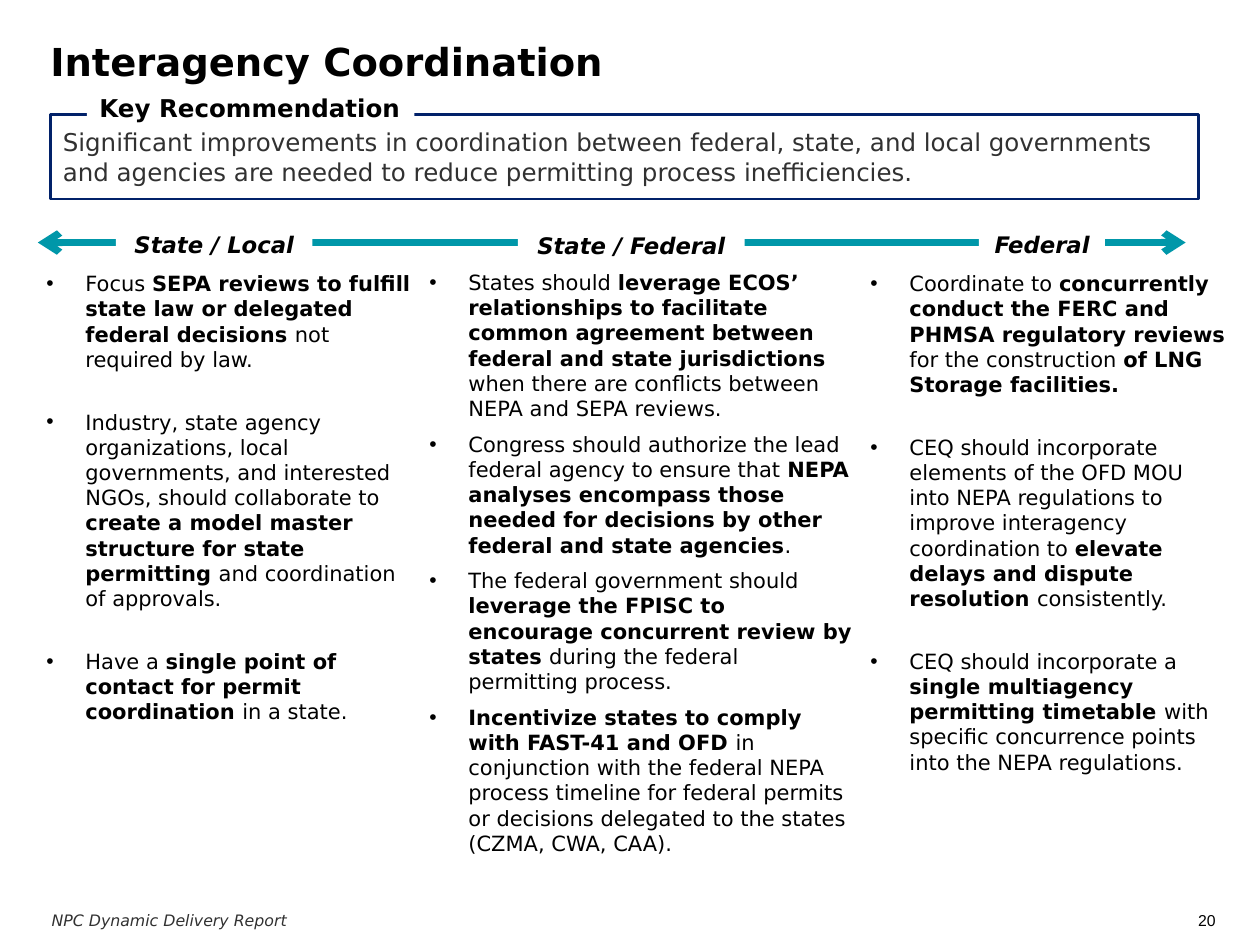
from lxml import etree
from pptx import Presentation
from pptx import util as u
from pptx.dml.color import RGBColor
from pptx.enum import shapes, text
from pptx.oxml.ns import qn

COLORS = {"black": "000000", "grey": "313131", "white": "FFFFFF", "navy": "012169", "teal": "0097A9"}
BODY_FONT = "DejaVu Sans"
INDENT = 22.32

STATE_LOCAL = [
    ["Focus ", "SEPA reviews to fulfill state law or delegated federal decisions ", "not required by law."],
    ["Industry, state agency organizations, local governments, and interested NGOs, should collaborate to",
     " create a model master structure for state permitting ", "and coordination of approvals."],
    ["Have a ", "single point of contact for permit coordination ", "in a state."],
]
STATE_FEDERAL = [
    ["States should ",
     "leverage ECOS’ relationships to facilitate common agreement between federal and state jurisdictions",
     " when there are conflicts between NEPA and SEPA reviews."],
    ["Congress should authorize the lead federal agency to ensure that ",
     "NEPA analyses encompass those needed for decisions by other federal and state agencies", "."],
    ["The federal government should ", "leverage the FPISC to encourage concurrent review by states ",
     "during the federal permitting process."],
    ["", "Incentivize states to comply with FAST-41 and OFD ",
     "in conjunction with the federal NEPA process timeline for federal permits or decisions "
     "delegated to the states (CZMA, CWA, CAA)."],
]
FEDERAL = [
    ["Coordinate to ", "concurrently conduct the FERC and PHMSA regulatory reviews ",
     "for the construction ", "of LNG Storage facilities."],
    ["CEQ should incorporate elements of the OFD MOU into NEPA regulations to improve "
     "interagency coordination to ", "elevate delays and dispute resolution ", "consistently."],
    ["CEQ should incorporate a ", "single multiagency permitting timetable ",
     "with specific concurrence points into the NEPA regulations."],
]


def rgb(name):
    return RGBColor.from_string(COLORS[name])


def points(*lengths):
    return [u.Pt(length) for length in lengths]


def add_run(paragraph, words, size, color="black", bold=False, italic=False, face=BODY_FONT):
    run = paragraph.add_run()
    run.text = words
    font = run.font
    font.size, font.name, font.bold, font.italic = u.Pt(size), face, bold, italic
    font.color.rgb = rgb(color)


def set_frame(frame, insets, wrap=True, anchor=text.MSO_ANCHOR.TOP):
    side, top = points(*insets)
    frame.margin_left = frame.margin_right = side
    frame.margin_top = frame.margin_bottom = top
    frame.word_wrap = wrap
    frame.vertical_anchor = anchor


def add_label(slide, box, words, size, anchor=text.MSO_ANCHOR.TOP, **style):
    frame = slide.shapes.add_textbox(*points(*box)).text_frame
    set_frame(frame, (0, 0), anchor=anchor)
    add_run(frame.paragraphs[0], words, size, **style)


def add_panel(slide, box, words, size, outline=None, insets=(7.2, 7.2), wrap=True,
              align=text.PP_ALIGN.LEFT, **style):
    panel = slide.shapes.add_shape(shapes.MSO_SHAPE.RECTANGLE, *points(*box))
    panel.shadow.inherit = False
    panel.fill.solid()
    panel.fill.fore_color.rgb = rgb("white")
    if outline:
        panel.line.color.rgb = rgb(outline)
        panel.line.width = u.Pt(1.5)
    else:
        panel.line.fill.background()
    set_frame(panel.text_frame, insets, wrap)
    paragraph = panel.text_frame.paragraphs[0]
    paragraph.alignment = align
    add_run(paragraph, words, size, **style)


def add_bullets(slide, box, items, gap):
    frame = slide.shapes.add_textbox(*points(*box)).text_frame
    set_frame(frame, (7.2, 3.6))
    for index, item in enumerate(items):
        paragraph = frame.add_paragraph() if index else frame.paragraphs[0]
        properties = paragraph._p.get_or_add_pPr()
        properties.set("marL", str(u.Pt(INDENT)))
        properties.set("indent", str(-u.Pt(INDENT)))
        etree.SubElement(properties, qn("a:buFont")).set("typeface", "Arial")
        etree.SubElement(properties, qn("a:buChar")).set("char", "•")
        paragraph.space_after = u.Pt(gap)
        for part, words in enumerate(item):
            if words:
                add_run(paragraph, words, 12, bold=part % 2 == 1)


def add_scale_arrow(slide, start, end):
    arrow = slide.shapes.add_connector(shapes.MSO_CONNECTOR.STRAIGHT, *points(*start, *end))
    arrow.line.color.rgb = rgb("teal")
    arrow.line.width = u.Pt(4)
    line = arrow.line._get_or_add_ln()
    for tip in ("a:headEnd", "a:tailEnd"):
        etree.SubElement(line, qn(tip)).set("type", "arrow")
    etree.SubElement(arrow._element.spPr, qn("a:effectLst"))


def main():
    deck = Presentation()
    deck.slide_width, deck.slide_height = points(720, 540)
    slide = deck.slides.add_slide(deck.slide_layouts[6])

    add_label(slide, (684.72, 520.56, 36, 10.8), "20", 9, anchor=text.MSO_ANCHOR.BOTTOM, face="Arial")
    add_label(slide, (29.52, 520.56, 475.2, 10.8), "NPC Dynamic Delivery Report", 9, color="grey", italic=True)
    add_label(slide, (28.8, 21.6, 662.4, 97.92), "Interagency Coordination", 22, bold=True)

    add_bullets(slide, (490.32, 151.2, 219.6, 333.36), FEDERAL, 21.5)
    add_bullets(slide, (238.32, 150.48, 256.32, 360), STATE_FEDERAL, 6)
    add_bullets(slide, (19.44, 151.2, 223.2, 278.64), STATE_LOCAL, 21.5)

    add_scale_arrow(slide, (677.52, 138.6), (21.6, 138.6))
    for heading, box in (
        ("State / Local", (66.24, 124.56, 112.32, 30.24)),
        ("Federal", (559.44, 124.56, 72, 30.24)),
        ("State / Federal", (295.92, 125.28, 129.6, 28.8)),
    ):
        add_panel(slide, box, heading, 13, align=text.PP_ALIGN.CENTER, bold=True, italic=True)

    add_panel(slide, (28.8, 65.52, 655.92, 48.24),
              "Significant improvements in coordination between federal, state, and local governments "
              "and agencies are needed to reduce permitting process inefficiencies.",
              14, outline="navy", color="grey")
    add_panel(slide, (49.68, 49.68, 187.2, 24.48), "Key Recommendation", 14,
              insets=(7.2, 3.6), wrap=False, bold=True)

    deck.save("out.pptx")


if __name__ == "__main__":
    main()
